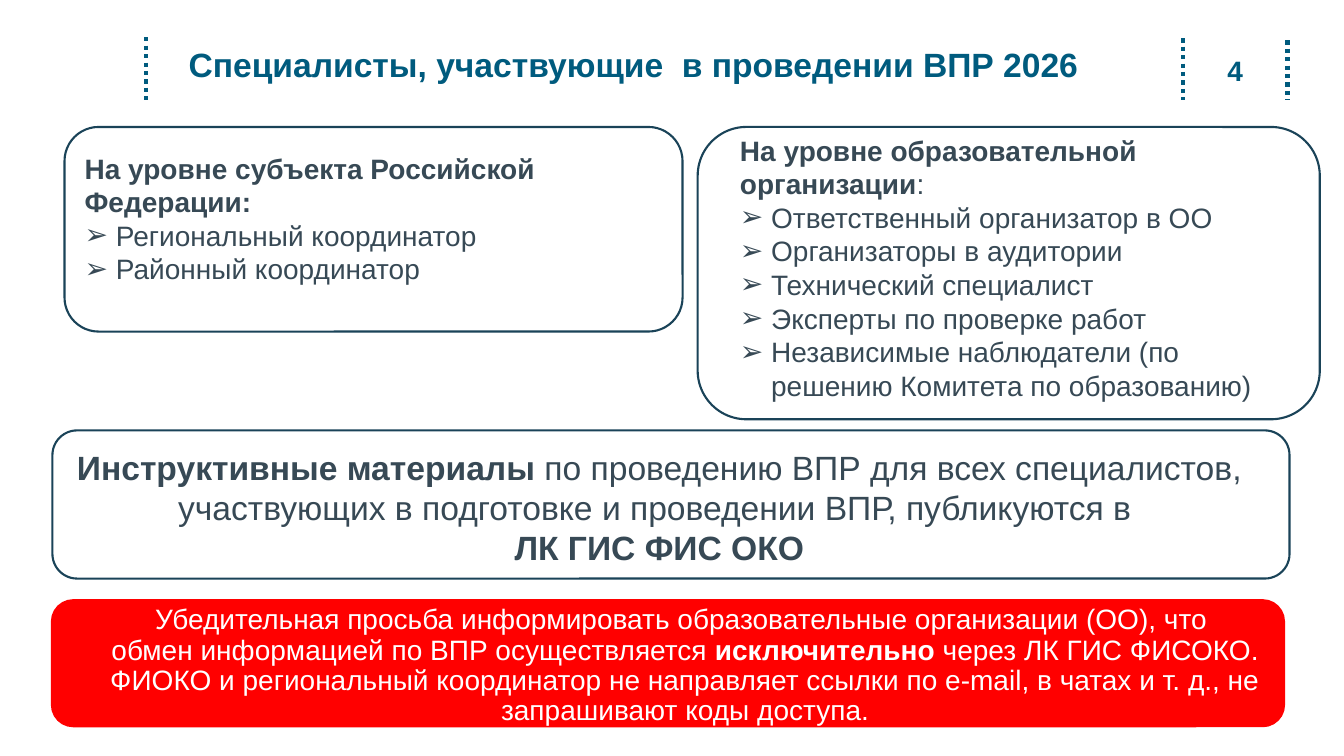
from lxml import etree
from pptx import Presentation
from pptx.dml.color import RGBColor
from pptx.enum.dml import MSO_LINE
from pptx.enum.shapes import MSO_CONNECTOR, MSO_SHAPE
from pptx.enum.text import MSO_ANCHOR, MSO_AUTO_SIZE, PP_ALIGN
from pptx.oxml.ns import qn
from pptx.util import Inches, Pt

TEAL = RGBColor(0x00, 0x5B, 0x7E)
NAVY = RGBColor(0x1A, 0x43, 0x58)
SLATE = RGBColor(0x37, 0x49, 0x55)
RED = RGBColor(0xFF, 0x00, 0x00)
WHITE = RGBColor(0xFF, 0xFF, 0xFF)
LEFT, CENTER = PP_ALIGN.LEFT, PP_ALIGN.CENTER
MIDDLE = MSO_ANCHOR.MIDDLE
NO_AUTOFIT, GROW = MSO_AUTO_SIZE.NONE, MSO_AUTO_SIZE.SHAPE_TO_FIT_TEXT
ROUNDED, STRAIGHT = MSO_SHAPE.ROUNDED_RECTANGLE, MSO_CONNECTOR.STRAIGHT
DOTTED = MSO_LINE.ROUND_DOT


def add_runs(paragraph, parts, size, color, align=LEFT):
    paragraph.alignment = align
    for text, bold in parts:
        for index, line in enumerate(text.split("\n")):
            if index:
                paragraph.add_line_break()
            run = paragraph.add_run()
            run.text = line
            run.font.name = "Arial"
            run.font.size = Pt(size)
            run.font.bold = bold
            run.font.color.rgb = color


def add_text(left, top, width, height):
    box = slide.shapes.add_textbox(Inches(left), Inches(top), Inches(width), Inches(height))
    box.text_frame.word_wrap = True
    return box.text_frame


prs = Presentation()
prs.slide_width = Inches(13.33)
prs.slide_height = Inches(7.5)
slide = prs.slides.add_slide(prs.slide_layouts[5])

for x, top in [(1.45, 0.37), (11.73, 0.38), (12.77, 0.4)]:
    divider = slide.shapes.add_connector(STRAIGHT, Inches(x), Inches(top), Inches(x), Inches(0.99))
    divider.line.color.rgb = TEAL
    divider.line.width = Pt(3)
    divider.line.dash_style = DOTTED
    etree.SubElement(divider._element.spPr, qn("a:effectLst"))

title = slide.shapes.title
title.left, title.top = Inches(1.77), Inches(0.37)
title.width, title.height = Inches(9.77), Inches(0.58)
heading = title.text_frame
heading.auto_size = NO_AUTOFIT
heading.vertical_anchor = MIDDLE
add_runs(heading.paragraphs[0], [("Специалисты, участвующие  в проведении ВПР 2026", True)], 24, TEAL)
heading.paragraphs[0].line_spacing = 0.9

page_number = add_text(11.98, 0.43, 0.54, 0.53)
page_number.vertical_anchor = MIDDLE
add_runs(page_number.paragraphs[0], [("4", True)], 20, TEAL, CENTER)

panels = [
    (0.64, 1.26, 6.13, 2.03, None, NAVY, 1.5),
    (6.92, 1.26, 6.17, 2.9, None, NAVY, 1.5),
    (0.52, 4.27, 12.27, 1.47, None, NAVY, 1.5),
    (0.52, 5.96, 12.21, 1.24, RED, RED, 2.25),
]
for left, top, width, height, fill, outline, weight in panels:
    panel = slide.shapes.add_shape(ROUNDED, Inches(left), Inches(top), Inches(width), Inches(height))
    panel.shadow.inherit = False
    panel.line.color.rgb = outline
    panel.line.width = Pt(weight)
    if fill is None:
        panel.fill.background()
    else:
        panel.fill.solid()
        panel.fill.fore_color.rgb = fill

levels = [
    ((0.74, 1.45, 6.02, 1.45),
     [("На уровне субъекта Российской Федерации:", True)],
     ["Региональный координатор", "Районный координатор"]),
    ((7.24, 1.27, 5.75, 2.79),
     [("На уровне образовательной организации", True), (":", False)],
     ["Ответственный организатор в ОО", "Организаторы в аудитории",
      "Технический специалист", "Эксперты по проверке работ",
      "Независимые наблюдатели (по решению Комитета по образованию)"]),
]
for place, level_name, specialists in levels:
    frame = add_text(*place)
    frame.auto_size = GROW
    add_runs(frame.paragraphs[0], level_name, 20, SLATE)
    for specialist in specialists:
        paragraph = frame.add_paragraph()
        properties = paragraph._p.get_or_add_pPr()
        properties.set("marL", str(Inches(0.31)))
        properties.set("indent", str(-Inches(0.31)))
        etree.SubElement(properties, qn("a:buFont"), typeface="Wingdings")
        etree.SubElement(properties, qn("a:buChar"), char="➢")
        properties.find(qn("a:buFont")).set("typeface", "Arial")
        add_runs(paragraph, [(specialist, False)], 20, SLATE)

materials = add_text(0.56, 4.38, 11.96, 1.31)
materials.auto_size = GROW
add_runs(materials.paragraphs[0], [
    ("Инструктивные материалы ", True),
    ("по проведению ВПР для всех специалистов, участвующих в подготовке "
     "и проведении ВПР, публикуются в ", False),
], 24, SLATE, CENTER)
add_runs(materials.add_paragraph(), [("ЛК ГИС ФИС ОКО", True)], 24, SLATE, CENTER)

request = add_text(0.52, 5.96, 12.55, 1.25)
request.margin_left = request.margin_right = Inches(0.3)
add_runs(request.paragraphs[0], [
    ("Убедительная просьба информировать образовательные организации (ОО), что \n"
     "обмен информацией по ВПР осуществляется ", False),
    ("исключительно", True),
    (" через ЛК ГИС ФИСОКО. ФИОКО и региональный координатор не направляет ссылки "
     "по e-mail, в чатах и т. д., не запрашивают коды доступа.", False),
], 20, WHITE, CENTER)
request.paragraphs[0].line_spacing = 0.9

prs.save("out.pptx")
